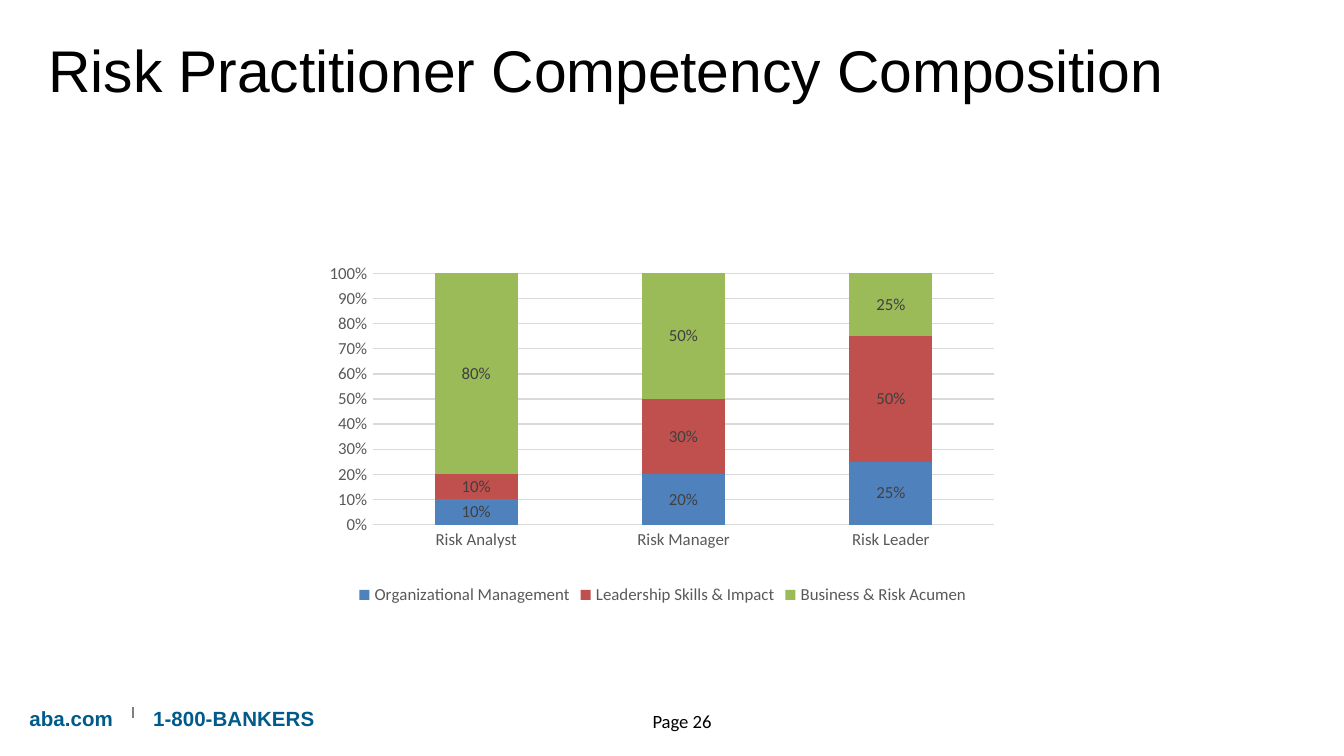
from lxml import etree
from pptx import Presentation
from pptx import util as u
from pptx.chart.data import CategoryChartData
from pptx.dml.color import RGBColor
from pptx.enum import chart as charts, shapes, text
from pptx.oxml import parse_xml
from pptx.oxml.ns import nsdecls, qn

COLORS = {
    "black": "000000", "brand": "005A8C", "divider": "808080",
    "axis_text": "595959", "label": "404040", "grid": "D9D9D9",
}
ROLES = ["Risk Analyst", "Risk Manager", "Risk Leader"]
COMPETENCIES = [
    ("Organizational Management", "4F81BD", (0.1, 0.2, 0.25)),
    ("Leadership Skills & Impact", "C0504D", (0.1, 0.3, 0.5)),
    ("Business & Risk Acumen", "9BBB59", (0.8, 0.5, 0.25)),
]
PLOT_PERCENT = {"x": 8.5, "y": 17.6, "w": 89, "h": 61.5}


def rgb(name):
    return RGBColor.from_string(COLORS.get(name, name))


def style_font(font, size, color="black", name="Calibri", bold=False):
    font.size = u.Pt(size)
    font.name = name
    font.bold = bold
    font.color.rgb = rgb(color)


def write(frame, words, align=text.PP_ALIGN.LEFT, tab=None, **style):
    """Fill a text frame with one formatted paragraph, with an optional tab stop."""
    para = frame.paragraphs[0]
    para.alignment = align
    if tab is not None:
        stops = etree.SubElement(para._p.get_or_add_pPr(), qn("a:tabLst"))
        etree.SubElement(stops, qn("a:tab"), pos=str(u.Inches(tab)), algn="l")
    span = para.add_run()
    span.text = words
    style_font(span.font, **style)


def set_line(line, color, width):
    line.color.rgb = rgb(color)
    line.width = u.Pt(width)


def place_plot(chart):
    """Fix the inner plot area as percentages of the chart."""
    plot_area = chart._chartSpace.chart.plotArea
    for old in plot_area.findall(qn("c:layout")):
        plot_area.remove(old)
    modes = "".join(f'<c:{side}Mode val="edge"/>' for side in "xy")
    sizes = "".join(f'<c:{key} val="{value / 100:.3f}"/>'
                    for key, value in PLOT_PERCENT.items())
    plot_area.insert(0, parse_xml(
        f'<c:layout {nsdecls("c")}><c:manualLayout><c:layoutTarget val="inner"/>'
        f"{modes}{sizes}</c:manualLayout></c:layout>"))


class SlideBuilder:
    def __init__(self, deck):
        self.page = deck.slides.add_slide(deck.slide_layouts[5])

    def title(self, words, left, top, width, height, **style):
        box = self.page.shapes.title
        box.left, box.top = u.Inches(left), u.Inches(top)
        box.width, box.height = u.Inches(width), u.Inches(height)
        frame = box.text_frame
        frame.auto_size = text.MSO_AUTO_SIZE.NONE
        frame.vertical_anchor = text.MSO_ANCHOR.MIDDLE
        write(frame, words, **style)

    def text_box(self, words, left, top, width, height, inset=(0.1, 0.05), **style):
        box = self.page.shapes.add_textbox(*map(u.Inches, (left, top, width, height)))
        frame = box.text_frame
        frame.word_wrap = True
        frame.margin_left = frame.margin_right = u.Inches(inset[0])
        frame.margin_top = frame.margin_bottom = u.Inches(inset[1])
        write(frame, words, **style)

    def line(self, x1, y1, x2, y2, color, width):
        connector = self.page.shapes.add_connector(
            shapes.MSO_CONNECTOR.STRAIGHT, *map(u.Inches, (x1, y1, x2, y2)))
        set_line(connector.line, color, width)
        etree.SubElement(connector._element.spPr, qn("a:effectLst"))

    def stacked_columns(self, left, top, width, height):
        data = CategoryChartData(number_format="0%")
        data.categories = ROLES
        for name, _, values in COMPETENCIES:
            data.add_series(name, values)
        chart = self.page.shapes.add_chart(
            charts.XL_CHART_TYPE.COLUMN_STACKED,
            *map(u.Inches, (left, top, width, height)), data).chart
        style_font(chart.font, 10)
        chart.has_title = False
        chart.has_legend = True
        chart.legend.position = charts.XL_LEGEND_POSITION.BOTTOM
        chart.legend.include_in_layout = False
        style_font(chart.legend.font, 9, "axis_text")

        for axis in (chart.category_axis, chart.value_axis):
            axis.major_tick_mark = axis.minor_tick_mark = charts.XL_TICK_MARK.NONE
            style_font(axis.tick_labels.font, 9, "axis_text")
        set_line(chart.category_axis.format.line, "grid", 0.75)
        values_axis = chart.value_axis
        values_axis.maximum_scale = 1
        values_axis.tick_labels.number_format = "0%"
        values_axis.tick_labels.number_format_is_linked = False
        values_axis.format.line.fill.background()
        set_line(values_axis.major_gridlines.format.line, "grid", 0.75)

        plot = chart.plots[0]
        plot.gap_width, plot.overlap = 150, 100
        plot.vary_by_categories = False
        for series, (_, color, _) in zip(plot.series, COMPETENCIES):
            series.format.fill.solid()
            series.format.fill.fore_color.rgb = rgb(color)
            labels = series.data_labels
            labels.show_value = True
            labels.number_format = "0%"
            labels.number_format_is_linked = False
            labels.position = charts.XL_LABEL_POSITION.CENTER
            style_font(labels.font, 9, "label")
        place_plot(chart)


def main():
    deck = Presentation()
    deck.slide_width = u.Inches(10)
    deck.slide_height = u.Inches(10 * 9 / 16)
    builder = SlideBuilder(deck)
    builder.text_box("aba.com\t1-800-BANKERS", 0.11, 5.19, 3, 0.3,
                     inset=(0.11, 0.06), tab=0.92,
                     size=11, color="brand", name="Arial", bold=True)
    builder.line(0.99, 5.26, 0.99, 5.34, "divider", 1)
    builder.stacked_columns(2.33, 1.5, 5.2, 3.04)
    builder.title("Risk Practitioner Competency Composition",
                  0.26, 0.04, 9, 0.94, size=31.5, name="Arial")
    builder.text_box("Page 26", 4.36, 5.23, 1.43, 0.27,
                     align=text.PP_ALIGN.CENTER, size=10)
    deck.save("out.pptx")


if __name__ == "__main__":
    main()
